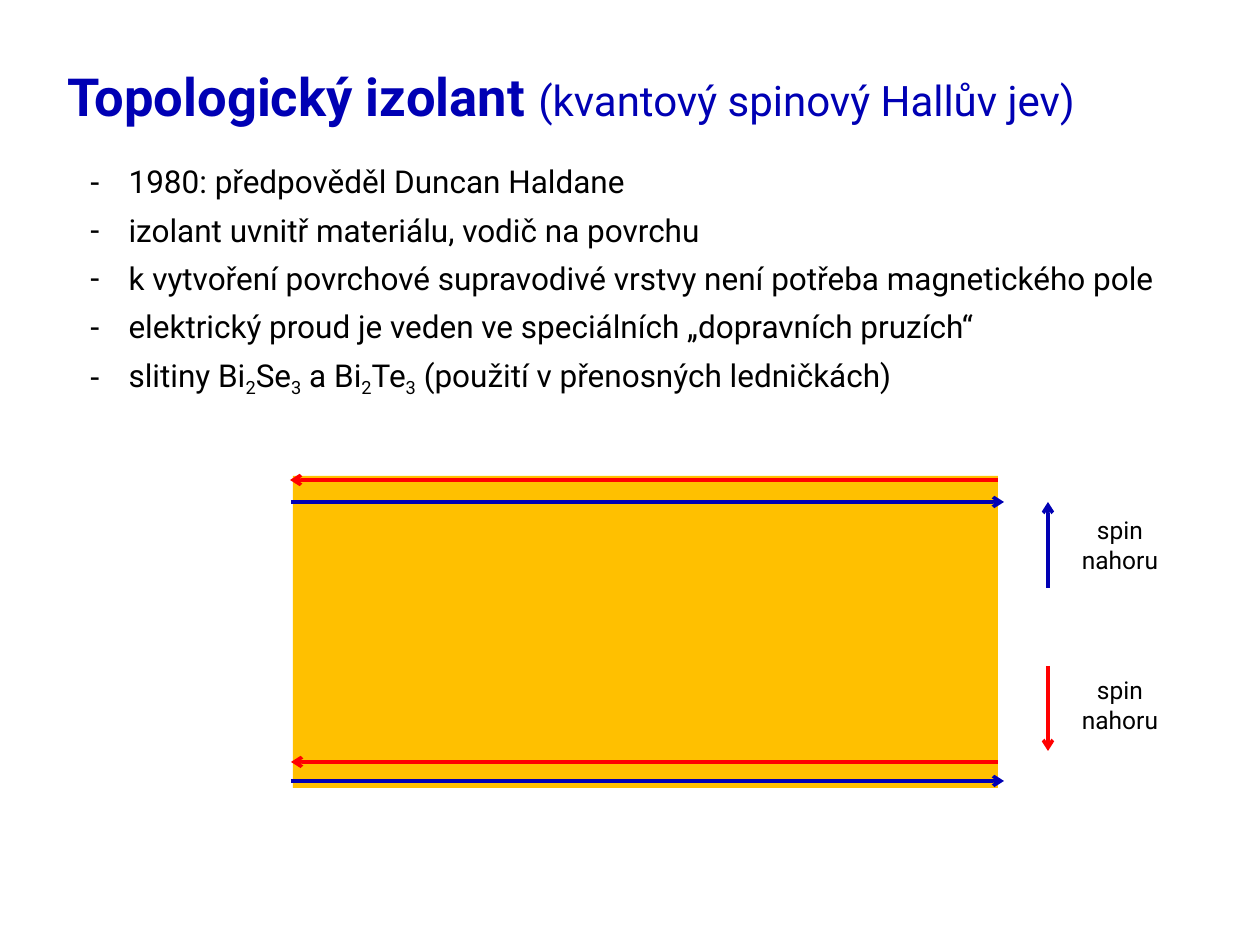
"""Build the slide on topological insulators and their spin channels."""
from lxml.etree import SubElement
from pptx import Presentation
from pptx.dml.color import RGBColor
from pptx.enum.shapes import MSO_CONNECTOR, MSO_SHAPE
from pptx.enum.text import MSO_ANCHOR, MSO_AUTO_SIZE, PP_ALIGN
from pptx.oxml.ns import qn
from pptx.util import Emu, Pt

BLUE = RGBColor(0x00, 0x00, 0xB4)
RED = RGBColor(0xFF, 0x00, 0x00)
AMBER = RGBColor(0xFF, 0xC0, 0x00)
BLACK = RGBColor(0x00, 0x00, 0x00)


def px(length):
    return Emu(round(length * 914400 / 126))


def style(run, size, color, bold=False):
    run.font.name = "Roboto"
    run.font.size = Pt(size)
    run.font.bold = bold
    run.font.color.rgb = color


prs = Presentation()
prs.slide_width, prs.slide_height = px(1260), px(945)
slide = prs.slides.add_slide(prs.slide_layouts[1])

title, points = slide.placeholders
title.left, title.top, title.width, title.height = px(55), px(58), px(1085), px(77)
points.left, points.top, points.width, points.height = px(77), px(156), px(1139), px(246)
for placeholder in (title, points):
    placeholder.text_frame.auto_size = MSO_AUTO_SIZE.NONE
    placeholder.text_frame.vertical_anchor = MSO_ANCHOR.TOP

heading = title.text_frame.paragraphs[0]
heading.alignment = PP_ALIGN.LEFT
for words, size, bold in (("Topologický izolant ", 30, True),
                          ("(kvantový spinový Hallův jev)", 24, False)):
    run = heading.add_run()
    run.text = words
    style(run, size, BLUE, bold)

facts = [
    ["1980: předpověděl Duncan Haldane"],
    ["izolant uvnitř materiálu, vodič na povrchu"],
    ["k vytvoření povrchové supravodivé vrstvy není potřeba magnetického pole"],
    ["elektrický proud je veden ve speciálních „dopravních pruzích“"],
    ["slitiny Bi", "2", "Se", "3", " a Bi", "2", "Te", "3",
     " (použití v přenosných ledničkách)"],
]
body = points.text_frame
for index, pieces in enumerate(facts):
    fact = body.add_paragraph() if index else body.paragraphs[0]
    fact.space_before, fact.space_after = Pt(0), Pt(6)
    props = fact._p.get_or_add_pPr()
    props.set("marL", str(px(39)))
    props.set("indent", str(px(-39)))
    SubElement(props, qn("a:buChar")).set("char", "-")
    for piece in pieces:
        run = fact.add_run()
        run.text = piece
        style(run, 18, BLACK)
        if piece.isdigit():
            run._r.get_or_add_rPr().set("baseline", "-25000")

material = slide.shapes.add_shape(MSO_SHAPE.RECTANGLE, px(293), px(476), px(705), px(312))
material.shadow.inherit = False
material.fill.solid()
material.fill.fore_color.rgb = AMBER
material.line.fill.background()

currents = [
    (291, 502, 1004, 502, BLUE),
    (291, 781, 1004, 781, BLUE),
    (998, 762, 291, 762, RED),
    (998, 480, 290, 480, RED),
    (1048, 588, 1048, 502, BLUE),
    (1048, 666, 1048, 751, RED),
]
for x1, y1, x2, y2, color in currents:
    current = slide.shapes.add_connector(MSO_CONNECTOR.STRAIGHT, px(x1), px(y1), px(x2), px(y2))
    current.line.color.rgb = color
    current.line.width = Pt(2)
    SubElement(current.line._get_or_add_ln(), qn("a:tailEnd")).set("type", "arrow")
    SubElement(current._element.spPr, qn("a:effectLst"))

for top in (509, 669):
    spin = slide.shapes.add_textbox(px(1048), px(top), px(144), px(72))
    spin.text_frame.word_wrap = True
    label = spin.text_frame.paragraphs[0]
    label.text = "spin nahoru"
    label.alignment = PP_ALIGN.CENTER
    style(label.runs[0], 14, BLACK)

prs.save("out.pptx")
